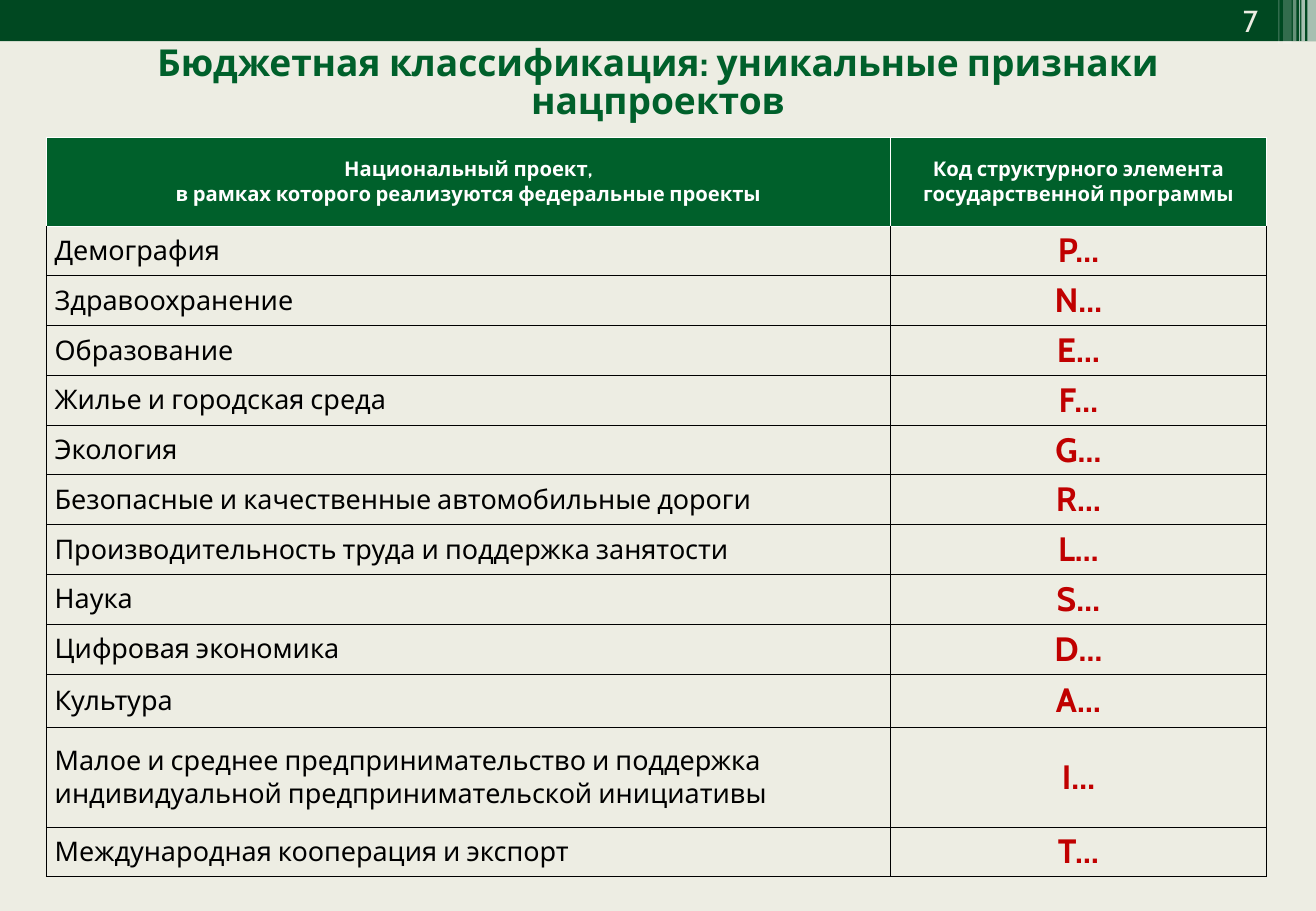
from lxml import etree
from pptx import Presentation
from pptx.dml.color import RGBColor
from pptx.enum.shapes import MSO_SHAPE
from pptx.enum.text import MSO_ANCHOR, PP_ALIGN
from pptx.oxml.ns import qn
from pptx.util import Inches, Pt

RECTANGLE = MSO_SHAPE.RECTANGLE
MIDDLE, TOP = MSO_ANCHOR.MIDDLE, MSO_ANCHOR.TOP
LEFT, CENTER = PP_ALIGN.LEFT, PP_ALIGN.CENTER

CREAM = RGBColor(0xED, 0xED, 0xE3)
DARK_GREEN = RGBColor(0x00, 0x48, 0x21)
GREEN = RGBColor(0x00, 0x60, 0x2B)
RED = RGBColor(0xC0, 0x00, 0x00)
BLACK = RGBColor(0x00, 0x00, 0x00)
WHITE = RGBColor(0xFF, 0xFF, 0xFF)

SLIDE_WIDTH, SLIDE_HEIGHT = 10.83, 7.5
BAND_HEIGHT = 0.34

TITLE_FORMAT = {"name": "Cabin", "size": Pt(22), "bold": True}
NUMBER_FORMAT = {"name": "Cabin", "size": Pt(18)}
HEADER_FORMAT = {"name": "Cabin", "size": Pt(12), "bold": True}
PROJECT_FORMAT = {"name": "Cabin", "size": Pt(16), "bold": False}
CODE_FORMAT = {"name": "Cabin", "size": Pt(20), "bold": True}

STRIPES = [
    (10.76, 0.07, 0.34, 65),
    (10.71, 0.03, 0.34, 65),
    (10.69, 0.01, 0.34, 60),
    (10.64, 0.03, 0.34, 40),
    (10.56, 0.07, 0.36, 20),
    (10.52, 0.01, 0.36, 30),
]

HEADERS = [
    "Национальный проект,\vв рамках которого реализуются федеральные проекты",
    "Код структурного элемента государственной программы",
]
PROJECTS = [
    ("Демография", "P…"),
    ("Здравоохранение", "N…"),
    ("Образование", "E…"),
    ("Жилье и городская среда", "F…"),
    ("Экология", "G…"),
    ("Безопасные и качественные автомобильные дороги", "R…"),
    ("Производительность труда и поддержка занятости", "L…"),
    ("Наука", "S…"),
    ("Цифровая экономика", "D…"),
    ("Культура", "A…"),
    ("Малое и среднее предпринимательство и поддержка "
     "индивидуальной предпринимательской инициативы", "I…"),
    ("Международная кооперация и экспорт", "T…"),
]
COLUMN_WIDTHS = [6.95, 3.09]
ROW_HEIGHTS = [0.73] + [0.41] * 9 + [0.44, 0.82, 0.41]


def write_text(paragraph, text, color, font_format, alignment):
    paragraph.text = text
    paragraph.alignment = alignment
    for run in paragraph.runs:
        for name, value in font_format.items():
            setattr(run.font, name, value)
        run.font.color.rgb = color


def add_rectangle(slide, left, width, height, color, opacity=100):
    shape = slide.shapes.add_shape(
        RECTANGLE, Inches(left), 0, Inches(width), Inches(height))
    shape.shadow.inherit = False
    shape.line.fill.background()
    shape.fill.solid()
    shape.fill.fore_color.rgb = color
    if opacity < 100:
        color_element = shape.fill._xPr.find(qn("a:solidFill"))[0]
        etree.SubElement(color_element, qn("a:alpha"), val=str(opacity * 1000))


def add_text(slide, box, text, color, font_format, anchor, margins=None):
    shape = slide.shapes.add_textbox(*map(Inches, box))
    frame = shape.text_frame
    frame.word_wrap = True
    frame.vertical_anchor = anchor
    for name, value in (margins or {}).items():
        setattr(frame, name, value)
    paragraph = frame.paragraphs[0]
    write_text(paragraph, text, color, font_format, CENTER)
    return paragraph


def set_border(cell, side, color):
    properties = cell._tc.get_or_add_tcPr()
    line = etree.SubElement(properties, qn(f"a:ln{side}"), w=str(Pt(0.5)))
    fill = etree.SubElement(line, qn("a:solidFill"))
    etree.SubElement(fill, qn("a:srgbClr"), val=str(color))


def fill_cell(cell, text, color, font_format, alignment, borders, background=None):
    cell.vertical_anchor = MIDDLE
    cell.margin_left = cell.margin_right = Inches(0.07)
    cell.margin_top = cell.margin_bottom = 0
    for side, border_color in borders.items():
        set_border(cell, side, border_color)
    if background is None:
        cell.fill.background()
    else:
        cell.fill.solid()
        cell.fill.fore_color.rgb = background
    write_text(cell.text_frame.paragraphs[0], text, color, font_format, alignment)


def add_project_table(slide):
    table = slide.shapes.add_table(
        len(ROW_HEIGHTS), len(COLUMN_WIDTHS), Inches(0.38), Inches(1.13),
        Inches(sum(COLUMN_WIDTHS)), Inches(sum(ROW_HEIGHTS))).table
    table.horz_banding = False
    for column, width in zip(table.columns, COLUMN_WIDTHS):
        column.width = Inches(width)
    for row, height in zip(table.rows, ROW_HEIGHTS):
        row.height = Inches(height)
    white_borders = dict.fromkeys("LRTB", WHITE)
    black_borders = dict.fromkeys("LRTB", BLACK)
    for column, header in enumerate(HEADERS):
        fill_cell(table.cell(0, column), header, WHITE, HEADER_FORMAT, CENTER,
                  white_borders, GREEN)
    for row, (project, code) in enumerate(PROJECTS, 1):
        borders = {**black_borders, "T": WHITE if row == 1 else BLACK}
        fill_cell(table.cell(row, 0), project, BLACK, PROJECT_FORMAT, LEFT, borders)
        fill_cell(table.cell(row, 1), code, RED, CODE_FORMAT, CENTER, borders)


def main():
    presentation = Presentation()
    presentation.slide_width = Inches(SLIDE_WIDTH)
    presentation.slide_height = Inches(SLIDE_HEIGHT)
    slide = presentation.slides.add_slide(presentation.slide_layouts[6])
    slide.background.fill.solid()
    slide.background.fill.fore_color.rgb = CREAM

    add_rectangle(slide, 0, SLIDE_WIDTH, BAND_HEIGHT, DARK_GREEN)
    for left, width, height, opacity in STRIPES:
        add_rectangle(slide, left, width, height, WHITE, opacity)
    no_margins = dict.fromkeys(
        ["margin_left", "margin_top", "margin_right", "margin_bottom"], 0)
    add_text(slide, (10.05, 0.02, 0.48, 0.3), "7", CREAM, NUMBER_FORMAT, TOP, no_margins)
    add_project_table(slide)
    title = add_text(slide, (0.17, 0.34, 10.49, 0.71),
                     "Бюджетная классификация: уникальные признаки нацпроектов",
                     GREEN, TITLE_FORMAT, MIDDLE)
    title.line_spacing = 0.85
    presentation.save("out.pptx")


if __name__ == "__main__":
    main()
